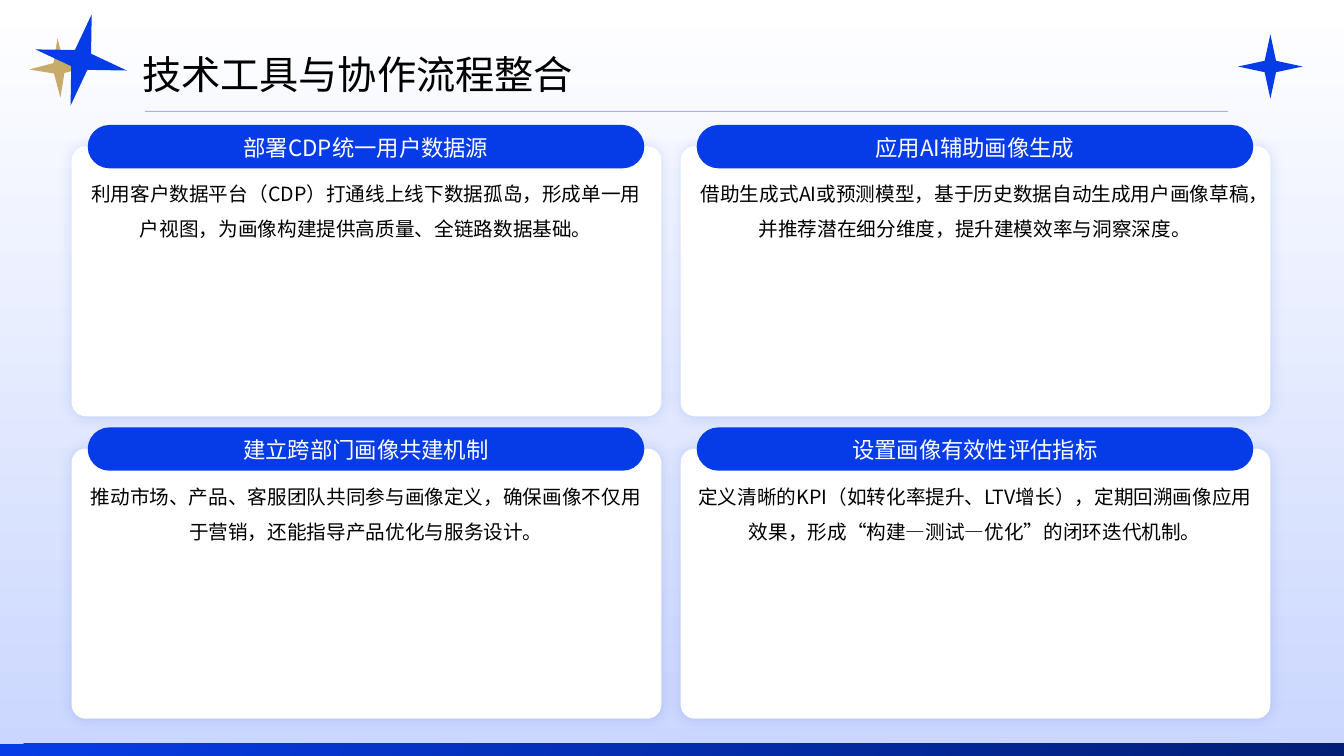
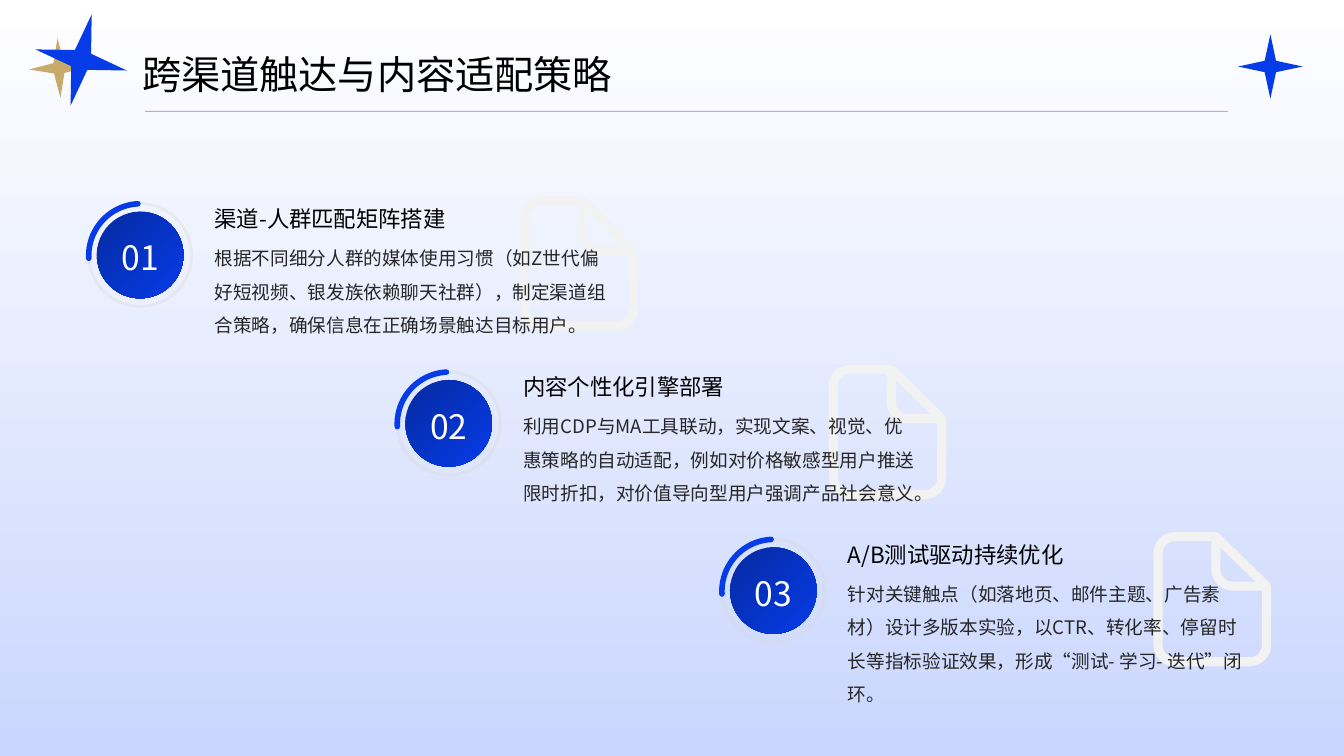
import math

from lxml import etree
from pptx import Presentation
from pptx.dml.color import RGBColor
from pptx.enum import shapes, text
from pptx.oxml import ns
from pptx.util import Inches, Pt

BLUE = RGBColor(0x06, 0x3C, 0xE8)
DEEP_BLUE = RGBColor(0x05, 0x2D, 0xAE)
NAVY = RGBColor(0x03, 0x1E, 0x74)
PALE_BLUE = RGBColor(0xCA, 0xD6, 0xFE)
GOLD = RGBColor(0xC6, 0xAB, 0x6A)
WHITE = RGBColor(0xFF, 0xFF, 0xFF)
BLACK = RGBColor(0x00, 0x00, 0x00)
DARK_GREY = RGBColor(0x26, 0x26, 0x26)
RING_GREY = RGBColor(0xD9, 0xD9, 0xD9)
ICON_GREY = RGBColor(0xF2, 0xF2, 0xF2)
FONT = "Noto Sans CJK SC"
KIND = shapes.MSO_SHAPE
CENTER = text.PP_ALIGN.CENTER
MIDDLE = text.MSO_ANCHOR.MIDDLE


def add_text(page, words, left, top, width, height, size, color=BLACK,
             spacing=1.5, align=None, anchor=text.MSO_ANCHOR.TOP, inset=True):
    box = page.shapes.add_textbox(Inches(left), Inches(top), Inches(width), Inches(height))
    frame = box.text_frame
    frame.word_wrap = True
    frame.vertical_anchor = anchor
    if not inset:
        frame.margin_left = frame.margin_right = frame.margin_top = frame.margin_bottom = 0
    para = frame.paragraphs[0]
    para.alignment = align
    para.line_spacing = spacing
    span = para.add_run()
    span.text = words
    span.font.size = Pt(size)
    span.font.color.rgb = color
    span.font.name = FONT
    east_asian = etree.SubElement(span.font._element, ns.qn("a:ea"))
    east_asian.set("typeface", FONT)


def add_shape(page, kind, left, top, width, height, fill=None, stops=None, angle=None,
              line=None, weight=1, alpha=None, rotation=0, corner=None):
    """Fill is a colour; stops are (position, colour) pairs, radial without an angle."""
    shape = page.shapes.add_shape(kind, Inches(left), Inches(top), Inches(width), Inches(height))
    shape.shadow.inherit = False
    shape.rotation = rotation
    if corner is not None:
        shape.adjustments[0] = corner
    if stops:
        shape.fill.gradient()
        for stop, (position, color) in zip(shape.fill.gradient_stops, stops):
            stop.position = position
            stop.color.rgb = color
        if angle is not None:
            shape.fill.gradient_angle = angle
        else:
            linear = shape._element.spPr.find(".//" + ns.qn("a:lin"))
            radial = etree.Element(ns.qn("a:path"), path="circle")
            etree.SubElement(radial, ns.qn("a:fillToRect"), l="100000", t="100000")
            linear.getparent().replace(linear, radial)
    elif fill is not None:
        shape.fill.solid()
        shape.fill.fore_color.rgb = fill
    else:
        shape.fill.background()
    if line is not None:
        shape.line.color.rgb = line
        shape.line.width = Pt(weight)
    else:
        shape.line.fill.background()
    if alpha is not None:
        color = shape._element.spPr.find(".//" + ns.qn("a:srgbClr"))
        etree.SubElement(color, ns.qn("a:alpha"), val=str(alpha * 1000))
    return shape


deck = Presentation()
deck.slide_width = Inches(13.33)
deck.slide_height = Inches(7.5)

# Shared background, title, rule and stars
pages = []
for title in ("技术工具与协作流程整合", "跨渠道触达与内容适配策略"):
    page = deck.slides.add_slide(deck.slide_layouts[6])
    add_shape(page, KIND.RECTANGLE, 0, 0, 13.33, 7.5,
              stops=[(0, WHITE), (1, PALE_BLUE)], angle=270)
    add_shape(page, KIND.STAR_4_POINT, 0.29, 0.38, 0.59, 0.59, fill=GOLD, rotation=357.2)
    add_shape(page, KIND.STAR_4_POINT, 0.34, 0.13, 0.93, 0.93, fill=BLUE, rotation=13)
    add_shape(page, KIND.STAR_4_POINT, 12.28, 0.34, 0.64, 0.64, fill=BLUE)
    add_shape(page, KIND.RECTANGLE, 1.44, 1.1, 10.74, 0.01, fill=BLUE, alpha=38)
    add_text(page, title, 1.41, 0.37, 7.9, 0.59, 28, spacing=1.3, anchor=MIDDLE, inset=False)
    pages.append(page)
tools_page, channel_page = pages

# Tools: bottom band and a two by two grid of cards
add_shape(tools_page, KIND.RECTANGLE, 0, 7.38, 13.33, 0.12,
          stops=[(0, BLUE), (1, NAVY)], angle=315)
cards = [
    ("部署CDP统一用户数据源",
     "利用客户数据平台（CDP）打通线上线下数据孤岛，形成单一用户视图，为画像构建提供高质量、全链路数据基础。"),
    ("应用AI辅助画像生成",
     "借助生成式AI或预测模型，基于历史数据自动生成用户画像草稿，并推荐潜在细分维度，提升建模效率与洞察深度。"),
    ("建立跨部门画像共建机制",
     "推动市场、产品、客服团队共同参与画像定义，确保画像不仅用于营销，还能指导产品优化与服务设计。"),
    ("设置画像有效性评估指标",
     "定义清晰的KPI（如转化率提升、LTV增长），定期回溯画像应用效果，形成“构建—测试—优化”的闭环迭代机制。"),
]
for index, (heading, body) in enumerate(cards):
    row, column = divmod(index, 2)
    left, top = 0.71 + 6.04 * column, 1.45 + 3 * row
    card = add_shape(tools_page, KIND.ROUNDED_RECTANGLE, left, top, 5.85, 2.68,
                     fill=WHITE, corner=0.053)
    effects = card._element.spPr.find(ns.qn("a:effectLst"))
    glow = etree.SubElement(effects, ns.qn("a:outerShdw"), blurRad=str(Pt(10)), dist="0",
                            dir="0", algn="ctr", rotWithShape="0")
    tint = etree.SubElement(glow, ns.qn("a:srgbClr"), val=str(BLUE))
    etree.SubElement(tint, ns.qn("a:alpha"), val="15000")
    add_text(tools_page, body, left + 0.16, top + 0.24, 5.52, 2.36, 14,
             align=CENTER, inset=False)
    add_shape(tools_page, KIND.ROUNDED_RECTANGLE, left + 0.16, top - 0.21, 5.52, 0.43,
              fill=BLUE, corner=0.5)
    add_text(tools_page, heading, left + 0.16, top - 0.15, 5.52, 0.3, 16, color=WHITE,
             spacing=1.1, align=CENTER, inset=False)

# Document icon: rounded corners as (centre x, centre y, first angle, last angle)
RADIUS = 0.165
corners = []
for x, y, first, last in [(0.955, 1.12, 0, 90), (0.21, 1.12, 90, 180),
                          (0.21, 0.21, 180, 270), (0.785, 0.37, 180, 90)]:
    angles = [math.radians(first + (last - first) * step / 12) for step in range(13)]
    corners.append([(Inches(x + RADIUS * math.cos(turn)), Inches(y + RADIUS * math.sin(turn)))
                    for turn in angles])
fold_top = (Inches(0.62), Inches(0.045))
fold_end = (Inches(1.12), Inches(0.535))
sheet_points = [fold_end] + corners[0] + corners[1] + corners[2]
fold_points = corners[3] + [fold_end]

# Channels: three steps running down to the right
steps = [
    (0.88, 2.02, "渠道-人群匹配矩阵搭建",
     "根据不同细分人群的媒体使用习惯（如Z世代偏好短视频、银发族依赖聊天社群），制定渠道组合策略，确保信息在正确场景触达目标用户。"),
    (3.94, 3.69, "内容个性化引擎部署",
     "利用CDP与MA工具联动，实现文案、视觉、优惠策略的自动适配，例如对价格敏感型用户推送限时折扣，对价值导向型用户强调产品社会意义。"),
    (7.16, 5.35, "A/B测试驱动持续优化",
     "针对关键触点（如落地页、邮件主题、广告素材）设计多版本实验，以CTR、转化率、停留时长等指标验证效果，形成“测试- 学习- 迭代”闭环。"),
]
for number, (left, top, heading, body) in enumerate(steps, start=1):
    # Numbered disc with its ring and arc
    add_shape(channel_page, KIND.OVAL, left + 0.08, top + 0.08, 0.86, 0.86,
              stops=[(0.01, BLUE), (0.82, DEEP_BLUE)])
    add_text(channel_page, f"{number:02}", left + 0.2, top + 0.26, 0.62, 0.51, 24,
             color=WHITE, spacing=1.1, align=CENTER, anchor=MIDDLE)
    add_shape(channel_page, KIND.OVAL, left, top, 1.02, 1.02,
              line=RING_GREY, weight=2, alpha=36)
    arc = add_shape(channel_page, KIND.ARC, left, top, 1.03, 1.03,
                    line=BLUE, weight=4, rotation=267)
    arc.line._ln.set("cap", "rnd")

    # Document icon behind the text
    builder = channel_page.shapes.build_freeform(*fold_top)
    builder.add_line_segments(sheet_points, close=True)
    builder.move_to(*fold_top)
    builder.add_line_segments(fold_points, close=False)
    icon = builder.convert_to_shape(Inches(left + 4.28), Inches(top - 0.07))
    icon.shadow.inherit = False
    icon.fill.background()
    icon.line.color.rgb = ICON_GREY
    icon.line.width = Pt(6.5)

    add_text(channel_page, heading, left + 1.15, top - 0.3, 4.11, 0.63, 16,
             spacing=1.3, anchor=text.MSO_ANCHOR.BOTTOM)
    add_text(channel_page, body, left + 1.15, top + 0.27, 4.11, 1.21, 13.3, color=DARK_GREY)

deck.save("out.pptx")
